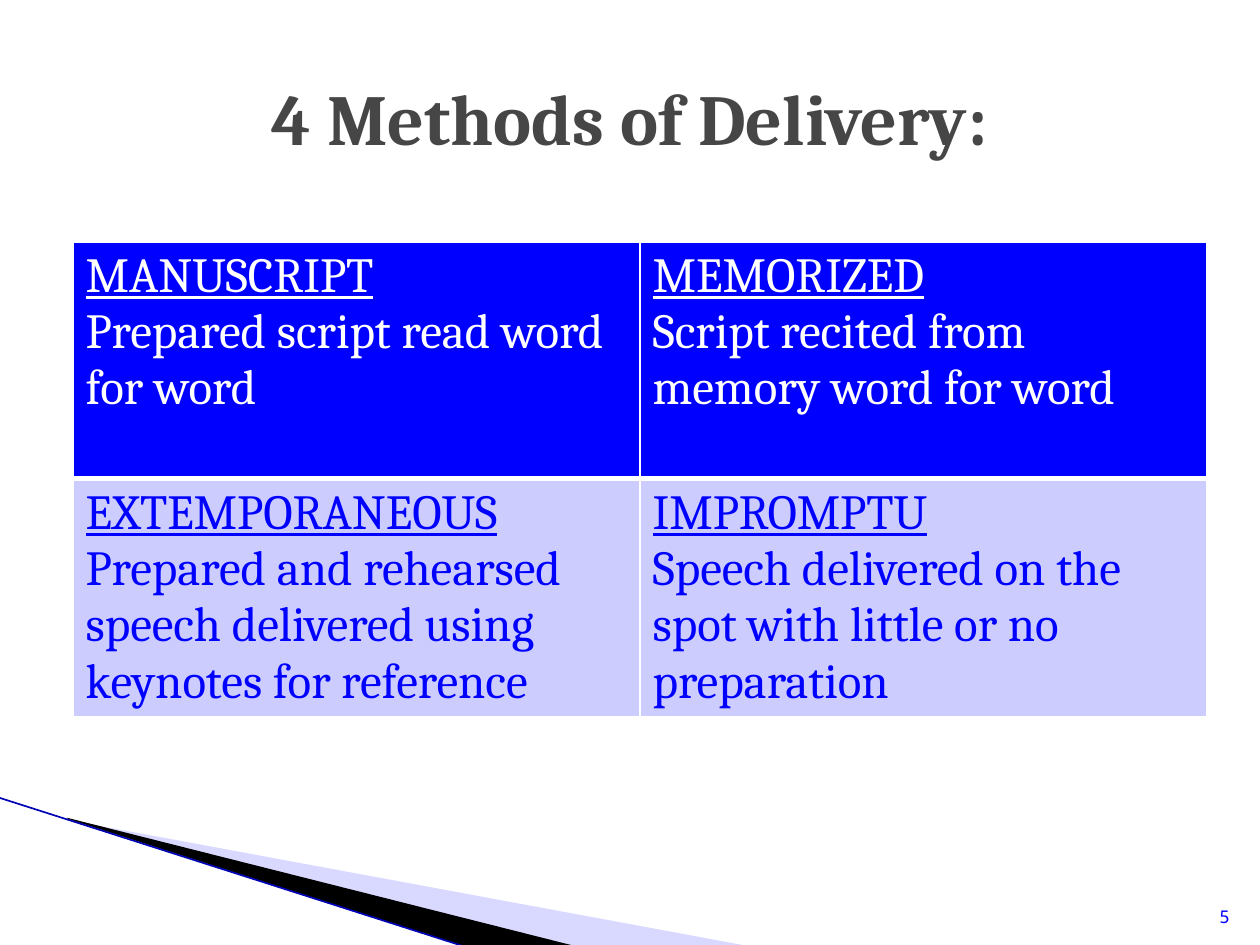
from lxml import etree
from pptx import Presentation
from pptx.dml.color import RGBColor
from pptx.enum.shapes import MSO_CONNECTOR
from pptx.enum.text import MSO_ANCHOR, PP_ALIGN
from pptx.oxml.ns import qn
from pptx.util import Inches, Pt

STRAIGHT = MSO_CONNECTOR.STRAIGHT
MIDDLE, BOTTOM = MSO_ANCHOR.MIDDLE, MSO_ANCHOR.BOTTOM
CENTER, RIGHT = PP_ALIGN.CENTER, PP_ALIGN.RIGHT

WHITE, BLACK, GRAY = "FFFFFF", "000000", "464646"
BLUE, PALE_BLUE, LILAC, NAVY = "0000FF", "CCCCFF", "A2A2FF", "0000B4"
SERIF, MONO = "Cambria", "Noto Sans Mono"

METHODS = [
    [("MANUSCRIPT", "Prepared script read word for word"),
     ("MEMORIZED", "Script recited from memory word for word")],
    [("EXTEMPORANEOUS",
      "Prepared and rehearsed speech delivered using keynotes for reference"),
     ("IMPROMPTU",
      "Speech delivered on the spot with little or no preparation")],
]
ROW_COLORS = [(BLUE, WHITE), (PALE_BLUE, BLUE)]  # fill, text


def color(code):
    return RGBColor.from_string(code)


def set_fill(fill, code):
    fill.solid()
    fill.fore_color.rgb = color(code)


def set_borders(cell, widths):
    """Draw white cell borders; widths maps a side (L, R, T, B) to points."""
    properties = cell._tc.get_or_add_tcPr()
    for index, (side, width) in enumerate(widths.items()):
        line = etree.Element(qn(f"a:ln{side}"), w=str(Pt(width)))
        fill = etree.SubElement(line, qn("a:solidFill"))
        etree.SubElement(fill, qn("a:srgbClr"), val=WHITE)
        properties.insert(index, line)


class SlideBuilder:
    def __init__(self, deck):
        self.slide = deck.slides.add_slide(deck.slide_layouts[5])
        self.shapes = self.slide.shapes
        set_fill(self.slide.background.fill, WHITE)

    def format_text(self, para, size, code, font=SERIF, bold=False,
                    underline=False, align=None):
        para.alignment = align
        for span in para.runs:
            span.font.name = font
            span.font.size = Pt(size)
            span.font.bold = bold
            span.font.underline = underline
            span.font.color.rgb = color(code)

    def wedge(self, points, code, opacity=None):
        corners = [(Inches(x), Inches(y)) for x, y in points]
        builder = self.shapes.build_freeform(*corners[0])
        builder.add_line_segments(corners[1:], close=True)
        shape = builder.convert_to_shape()
        shape.shadow.inherit = False
        set_fill(shape.fill, code)
        shape.line.fill.background()
        if opacity is not None:
            tint = shape.fill._xPr.find(".//" + qn("a:srgbClr"))
            etree.SubElement(tint, qn("a:alpha"), val=str(opacity * 1000))

    def line(self, start, end, code, width):
        ends = [Inches(value) for value in (*start, *end)]
        connector = self.shapes.add_connector(STRAIGHT, *ends)
        connector.line.color.rgb = color(code)
        connector.line.width = Pt(width)
        etree.SubElement(connector._element.spPr, qn("a:effectLst"))

    def title(self, text, left, top, width, height):
        box = self.shapes.title
        box.left, box.top = Inches(left), Inches(top)
        box.width, box.height = Inches(width), Inches(height)
        frame = box.text_frame
        frame.text = text
        frame.vertical_anchor = MIDDLE
        self.format_text(frame.paragraphs[0], 41, GRAY, bold=True, align=CENTER)

    def page_number(self, text, left, top, size):
        box = self.shapes.add_textbox(Inches(left), Inches(top),
                                      Inches(size), Inches(size))
        frame = box.text_frame
        frame.word_wrap = True
        frame.vertical_anchor = BOTTOM
        frame.text = text
        self.format_text(frame.paragraphs[0], 10, BLUE, font=MONO, align=RIGHT)

    def table(self, rows, left, top, width, height):
        table = self.shapes.add_table(len(rows), len(rows[0]), Inches(left),
                                      Inches(top), Inches(width),
                                      Inches(height)).table
        for r, row in enumerate(rows):
            fill_code, text_code = ROW_COLORS[r]
            widths = {"L": 1, "R": 1, "T": 3 if r else 1, "B": 1 if r else 3}
            for c, (name, description) in enumerate(row):
                cell = table.cell(r, c)
                cell.text_frame.text = f"{name}\n{description}"
                for index, para in enumerate(cell.text_frame.paragraphs):
                    self.format_text(para, 28, text_code, underline=index == 0)
                set_fill(cell.fill, fill_code)
                set_borders(cell, widths)


def main():
    deck = Presentation()
    deck.slide_width, deck.slide_height = Inches(10), Inches(7.5)
    page = SlideBuilder(deck)
    page.wedge([(0.55, 6.51), (5.95, 7.51), (4.56, 7.51), (0.55, 6.5)],
               LILAC, opacity=40)
    page.wedge([(0.53, 6.49), (4.57, 7.51), (3.72, 7.52), (0.54, 6.5)], BLACK)
    page.line((-0.01, 6.33), (3.71, 7.52), NAVY, 0.95)
    page.table(METHODS, 0.58, 1.92, 9, 3.76)
    page.title("4 Methods of Delivery:", 0.5, 0.3, 9, 1.25)
    page.page_number("5", 9.46, 7.01, 0.4)
    deck.save("out.pptx")


if __name__ == "__main__":
    main()
